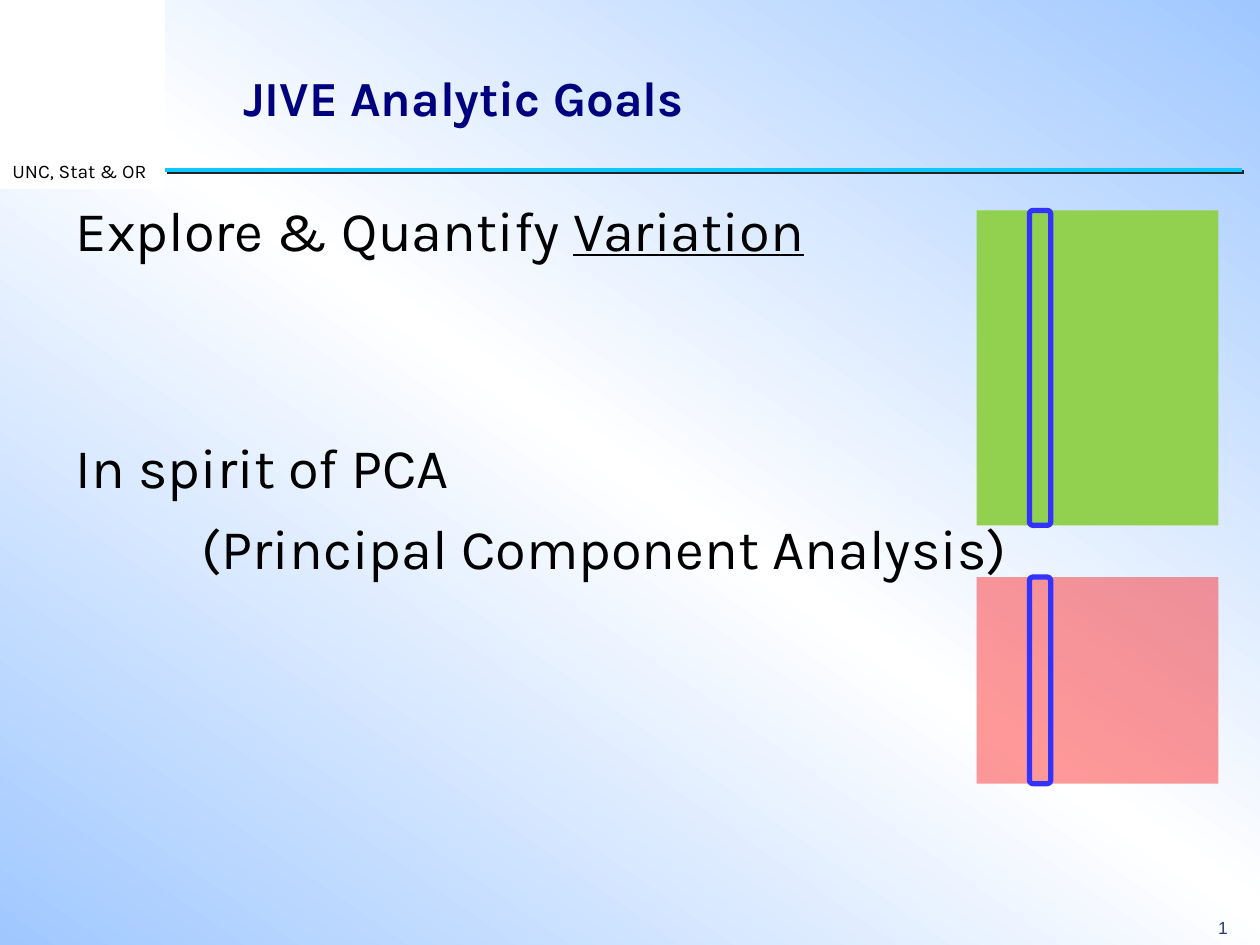
"""Build the JIVE Analytic Goals slide with its two data blocks."""
from dataclasses import dataclass

from lxml import etree
from pptx import Presentation
from pptx.dml.color import RGBColor as RGB
from pptx.enum.shapes import MSO_CONNECTOR, MSO_SHAPE as Shape
from pptx.enum.text import MSO_ANCHOR as Anchor, MSO_AUTO_SIZE as AutoSize, PP_ALIGN as Align
from pptx.oxml import parse_xml
from pptx.oxml.ns import nsdecls, qn
from pptx.util import Inches, Pt


@dataclass(frozen=True)
class Theme:
    font: str = "Karla"
    number_font: str = "Arial"
    title_size: int = 28
    body_size: int = 32
    label_size: int = 11
    number_size: int = 10
    ink: str = "000000"
    title: str = "00007F"
    number: str = "2A3D7A"
    rule: str = "0FC7FF"
    rule_shadow: str = "232323"
    paper: str = "FFFFFF"
    sky: str = "A0C8FF"
    green: str = "92D050"
    red: str = "FF0000"
    frame: str = "3333FF"


theme = Theme()


def style(font, size, color, name=theme.font, bold=False):
    font.size, font.name, font.bold = Pt(size), name, bold
    font.color.rgb = RGB.from_string(color)


def add_block(kind, left, top, width, height, fill=None, line=None):
    block = slide.shapes.add_shape(kind, Inches(left), Inches(top), Inches(width), Inches(height))
    block.shadow.inherit = False
    if fill:
        block.fill.solid()
        block.fill.fore_color.rgb = RGB.from_string(fill)
    else:
        block.fill.background()
    if line:
        block.line.color.rgb = RGB.from_string(line)
        block.line.width = Pt(3)
    else:
        block.line.fill.background()
    return block


deck = Presentation()
deck.slide_width, deck.slide_height = Inches(10), Inches(7.5)
slide = deck.slides.add_slide(deck.slide_layouts[1])

slide.background.fill.gradient()
gradient = slide.background._element.find(".//" + qn("a:gradFill"))
stops = "".join(
    f'<a:gs pos="{position * 1000}"><a:srgbClr val="{color}"/></a:gs>'
    for position, color in ((0, theme.sky), (50, theme.paper), (100, theme.sky))
)
gradient.getparent().replace(gradient, parse_xml(
    f'<a:gradFill {nsdecls("a")} rotWithShape="0"><a:gsLst>{stops}</a:gsLst>'
    f'<a:lin ang="{125 * 60000}" scaled="0"/></a:gradFill>'))

header_rule = slide.shapes.add_connector(
    MSO_CONNECTOR.STRAIGHT, Inches(1.31), Inches(1.35), Inches(9.86), Inches(1.35))
header_rule.line.color.rgb = RGB.from_string(theme.rule)
header_rule.line.width = Pt(2.25)
header_rule._element.spPr.append(parse_xml(
    f'<a:effectLst {nsdecls("a")}><a:outerShdw dist="{Pt(1.4)}" dir="{45 * 60000}">'
    f'<a:srgbClr val="{theme.rule_shadow}"/></a:outerShdw></a:effectLst>'))

page_number = slide.shapes.add_textbox(Inches(9.57), Inches(7.25), Inches(0.37), Inches(0.25))
page_number.text_frame.word_wrap = False
number_line = page_number.text_frame.paragraphs[0]
number_line.line_spacing = 0.9
number_run = number_line.add_run()
number_run.text = "14"
style(number_run.font, theme.number_size, theme.number, theme.number_font)
number_field = number_run._r
number_field.tag = qn("a:fld")
number_field.set("id", "{B6F15528-21DE-4FAA-801E-634DDDAF4B2B}")
number_field.set("type", "slidenum")

affiliation = add_block(Shape.RECTANGLE, 0, 0, 1.31, 1.5, fill=theme.paper)
affiliation.text_frame.word_wrap = True
affiliation.text_frame.vertical_anchor = Anchor.BOTTOM
affiliation_line = affiliation.text_frame.paragraphs[0]
affiliation_line.alignment = Align.LEFT
affiliation_run = affiliation_line.add_run()
affiliation_run.text = "UNC, Stat & OR"
style(affiliation_run.font, theme.label_size, theme.ink)

heading = slide.shapes.title
heading.left, heading.top, heading.width, heading.height = map(Inches, (1.83, 0.5, 7.82, 0.54))
heading.text_frame.vertical_anchor = Anchor.MIDDLE
heading.text_frame.auto_size = AutoSize.NONE
heading_line = heading.text_frame.paragraphs[0]
heading_line.alignment = Align.LEFT
heading_run = heading_line.add_run()
heading_run.text = "JIVE Analytic Goals"
style(heading_run.font, theme.title_size, theme.title, bold=True)

goals = slide.placeholders[1]
goals.left, goals.top, goals.width, goals.height = map(Inches, (0.5, 1.5, 9.04, 5.22))
goals.text_frame.auto_size = AutoSize.NONE
goal_lines = (
    (0, 0, (("Explore & Quantify ", False), ("Variation", True))),
    (97, 0, (("In spirit of PCA", False),)),
    (8, 1, (("(Principal Component Analysis)", False),)),
)
for index, (space, indent, runs) in enumerate(goal_lines):
    goal = goals.text_frame.add_paragraph() if index else goals.text_frame.paragraphs[0]
    goal.space_before = Pt(space)
    properties = goal._p.get_or_add_pPr()
    properties.set("marL", str(Inches(indent)))
    properties.set("indent", "0")
    etree.SubElement(properties, qn("a:buNone"))
    for words, underlined in runs:
        goal_run = goal.add_run()
        goal_run.text = words
        style(goal_run.font, theme.body_size, theme.ink)
        goal_run.font.underline = underlined

for top, height, color, opacity in ((1.67, 2.5, theme.green, 100), (4.58, 1.64, theme.red, 40)):
    data_block = add_block(Shape.RECTANGLE, 7.75, top, 1.92, height, fill=color)
    if opacity < 100:
        block_color = data_block._element.spPr.find(".//" + qn("a:srgbClr"))
        etree.SubElement(block_color, qn("a:alpha"), val=str(opacity * 1000))
    add_block(Shape.ROUNDED_RECTANGLE, 8.17, top, 0.17, height, line=theme.frame)

deck.save("out.pptx")
